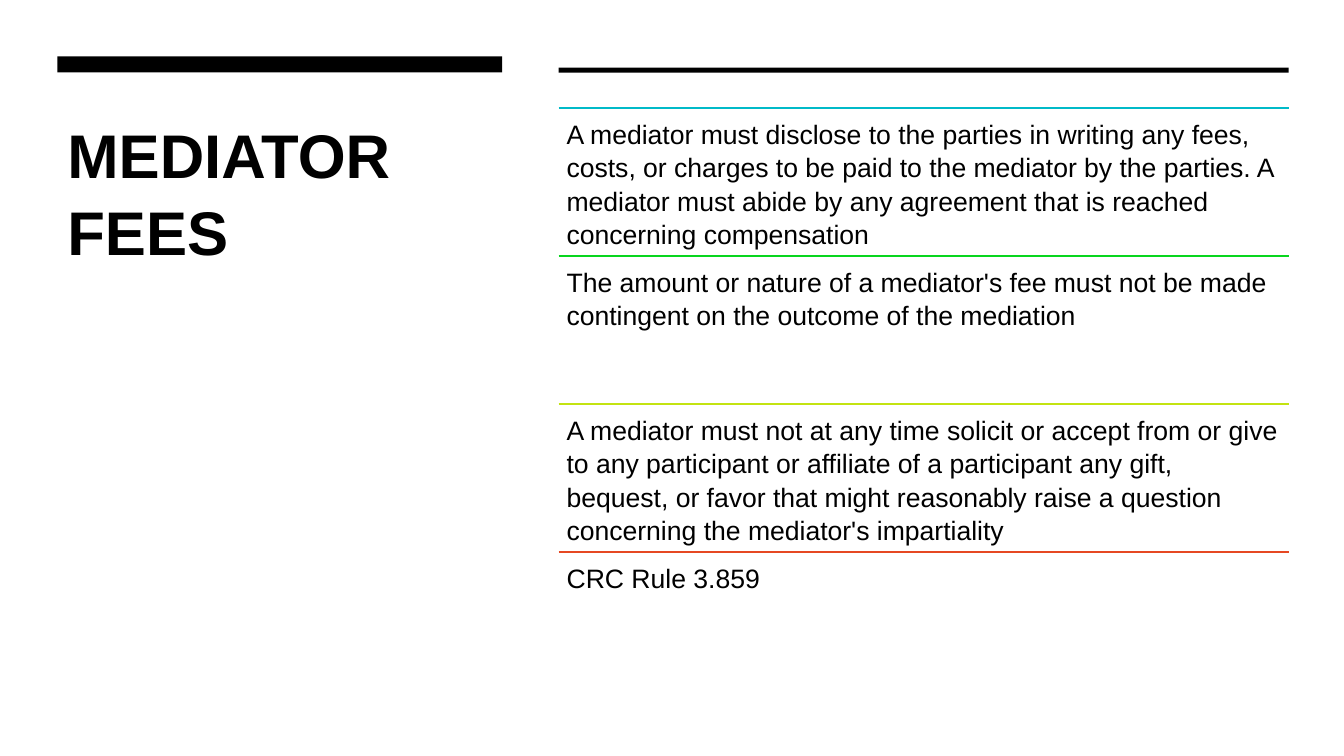
"""Build the mediator fees slide."""
from pptx import Presentation
from pptx.dml.color import RGBColor
from pptx.enum.shapes import MSO_CONNECTOR, MSO_SHAPE
from pptx.enum.text import MSO_ANCHOR
from pptx.oxml.ns import qn
from pptx.util import Inches, Pt
from lxml import etree

TITLE = "MEDIATOR FEES"
RULES = [
    ("00BAC8", "A mediator must disclose to the parties in writing any fees, costs, or charges "
               "to be paid to the mediator by the parties. A mediator must abide by any "
               "agreement that is reached concerning compensation"),
    ("08D61E", "The amount or nature of a mediator's fee must not be made contingent on the "
               "outcome of the mediation"),
    ("C3E311", "A mediator must not at any time solicit or accept from or give to any participant "
               "or affiliate of a participant any gift, bequest, or favor that might reasonably "
               "raise a question concerning the mediator's impartiality"),
    ("E64823", "CRC Rule 3.859"),
]
BLACK = "000000"
TITLE_X, TITLE_W = 0.57, 4.41
LIST_X, LIST_W = 5.54, 7.24
TOP, ROW_H = 1.07, 1.47
BARS = [(TITLE_X, 0.56, TITLE_W, 0.16), (LIST_X, 0.67, LIST_W, 0.05)]


def rgb(color):
    return RGBColor.from_string(color)


def add_bar(slide, box):
    sp = slide.shapes.add_shape(MSO_SHAPE.RECTANGLE, *map(Inches, box))
    sp.shadow.inherit = False
    sp.fill.solid()
    sp.fill.fore_color.rgb = rgb(BLACK)
    sp.line.fill.background()


def add_text(slide, box, text, size, inset, bold=False):
    tf = slide.shapes.add_textbox(*map(Inches, box)).text_frame
    tf.word_wrap = True
    tf.vertical_anchor = MSO_ANCHOR.TOP
    tf.margin_left = tf.margin_right = Inches(inset[0])
    tf.margin_top = tf.margin_bottom = Inches(inset[1])
    p = tf.paragraphs[0]
    p.text = text
    p.line_spacing = 1.05
    p.font.name = "Arial"
    p.font.size = Pt(size)
    p.font.bold = bold
    p.font.color.rgb = rgb(BLACK)


def add_rule(slide, y, color):
    ln = slide.shapes.add_connector(
        MSO_CONNECTOR.STRAIGHT, Inches(LIST_X), Inches(y), Inches(LIST_X + LIST_W), Inches(y))
    ln.line.color.rgb = rgb(color)
    ln.line.width = Pt(1.5)
    etree.SubElement(ln._element.spPr, qn("a:effectLst"))


def main():
    prs = Presentation()
    prs.slide_width, prs.slide_height = Inches(13.33), Inches(7.5)
    slide = prs.slides.add_slide(prs.slide_layouts[6])
    slide.background.fill.solid()
    slide.background.fill.fore_color.rgb = rgb("FFFFFF")
    add_text(slide, (TITLE_X, TOP, TITLE_W, 3.68), TITLE, 44, (0.1, 0.05), bold=True)
    for box in BARS:
        add_bar(slide, box)
    for i, (color, text) in enumerate(RULES):
        y = TOP + i * ROW_H
        add_rule(slide, y, color)
        add_text(slide, (LIST_X, y, LIST_W, ROW_H), text, 19, (0.08, 0.08))
    prs.save("out.pptx")


if __name__ == "__main__":
    main()
